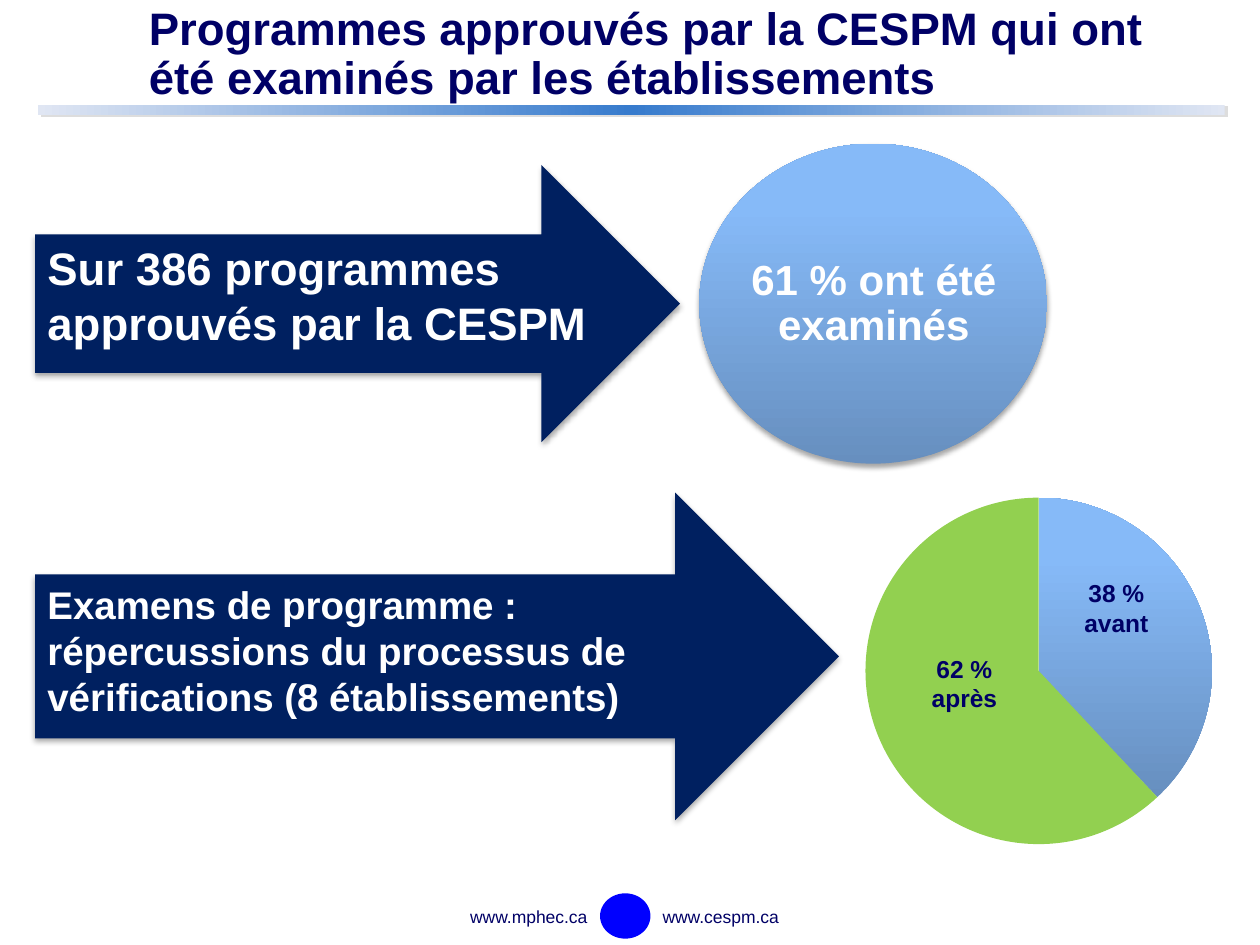
from copy import deepcopy

from lxml.etree import SubElement
from pptx import Presentation
from pptx.chart.data import CategoryChartData
from pptx.dml.color import RGBColor
from pptx.enum.chart import XL_CHART_TYPE as ChartType
from pptx.enum.shapes import MSO_SHAPE as Shape
from pptx.enum.text import MSO_ANCHOR as Anchor, PP_ALIGN as Align
from pptx.oxml import parse_xml
from pptx.oxml.ns import nsdecls, qn
from pptx.util import Pt

FONT = "Arial"
INK = RGBColor(0x00, 0x00, 0x66)
NAVY = RGBColor(0x00, 0x20, 0x60)
WHITE = RGBColor(0xFF, 0xFF, 0xFF)
GREEN = RGBColor(0x92, 0xD0, 0x50)
BADGE_BLUE = RGBColor(0x00, 0x00, 0xFF)
SKY_DARK = RGBColor(0x67, 0x8F, 0xBF)
SKY_LIGHT = RGBColor(0x86, 0xBA, 0xF8)
BAR_END = RGBColor(0xE0, 0xE6, 0xF3)
BAR_MIDDLE = RGBColor(0x37, 0x7B, 0xCD)

# Content: boxes are left, top, width, height in points
TITLE = "Programmes approuvés par la CESPM qui ont été examinés par les établissements"
TITLE_BOX = (77.8, 2.2, 621.4, 58.3)
BAR_BOX = (21.6, 59.8, 678.2, 5.8)
ARROWS = [
    ("Sur 386 programmes approuvés par la CESPM", 26, (20, 94.3, 368.6, 158.4)),
    ("Examens de programme : répercussions du processus de vérifications "
     "(8 établissements)", 22, (20, 281.5, 459.4, 187.2)),
]
ELLIPSE_BOX = (399.6, 82.1, 198.7, 182.9)
ELLIPSE_TEXT = "61 % ont été examinés"
ELLIPSE_TEXT_BOX = (429.1, 109.4, 140.4, 128.9)
PIE_BOX = (422.6, 281.5, 280.1, 203.8)
PIE_LAYOUT = {"x": 0.257, "y": 0, "w": 0.707, "h": 1}
PIE_VALUES = [38, 62]
PIE_LABELS = [
    ("62 %\naprès", (500, 370.1, 102.2, 41)),
    ("38 %\navant", (592.6, 326.9, 90.7, 41)),
]
BADGE_BOX = (342.9, 510.5, 28.8, 25.9)
FOOTERS = [
    ("www.mphec.ca", Align.RIGHT, (212.4, 514.1, 130.3, 19.4)),
    ("www.cespm.ca", Align.LEFT, (371.5, 514.1, 90, 19.4)),
]


def points(box):
    return [Pt(value) for value in box]


def write(shape, text, size, color, align=Align.LEFT, bold=True,
          anchor=Anchor.TOP, spacing=None):
    frame = shape.text_frame
    frame.word_wrap = True
    frame.vertical_anchor = anchor
    frame.text = text
    for para in frame.paragraphs:
        para.alignment = align
        para.line_spacing = spacing
        for span in para.runs:
            span.font.name, span.font.size = FONT, Pt(size)
            span.font.bold, span.font.color.rgb = bold, color


def add_text(page, box, *args, **kwargs):
    shape = page.shapes.add_textbox(*points(box))
    write(shape, *args, **kwargs)
    return shape


def add_plain(page, kind, box, color=None):
    shape = page.shapes.add_shape(kind, *points(box))
    shape.shadow.inherit = False
    shape.line.fill.background()
    if color is not None:
        shape.fill.solid()
        shape.fill.fore_color.rgb = color
    return shape


def set_gradient(fill, angle, stops):
    for stop, (position, color) in zip(fill.gradient_stops, stops):
        stop.position, stop.color.rgb = position, color
    fill.gradient_angle = angle


def sky_gradient(fill):
    fill.gradient()
    set_gradient(fill, 90, [(0, SKY_DARK), (0.8, SKY_LIGHT)])


def add_shadow(shape, color="000000", alpha=35, blur=3.1, distance=1.8, angle=90):
    effects = shape._element.spPr.find(qn("a:effectLst"))
    effects.append(parse_xml(
        f'<a:outerShdw {nsdecls("a")} blurRad="{Pt(blur)}" dist="{Pt(distance)}" '
        f'dir="{angle * 60000}" rotWithShape="0"><a:srgbClr val="{color}">'
        f'<a:alpha val="{alpha * 1000}"/></a:srgbClr></a:outerShdw>'))


def add_pie(page):
    data = CategoryChartData()
    data.categories = ["1", "2"]
    data.add_series("Series 1", PIE_VALUES)
    chart = page.shapes.add_chart(ChartType.PIE, *points(PIE_BOX), data).chart
    chart.has_legend = chart.has_title = False
    chart.font.name, chart.font.size = FONT, Pt(10)
    chart.font.color.rgb = INK
    plot = chart.plots[0]
    plot.vary_by_categories = True
    before, after = (plot.series[0].points[i].format for i in range(2))
    sky_gradient(before.fill)
    after.fill.solid()
    after.fill.fore_color.rgb = GREEN
    for part in (before, after):
        part.line.fill.background()

    # Fixed inner plot area
    area = chart._chartSpace.chart.plotArea
    for old in area.findall(qn("c:layout")):
        area.remove(old)
    layout = parse_xml(f'<c:layout {nsdecls("c")}><c:manualLayout/></c:layout>')
    settings = {"layoutTarget": "inner", "xMode": "edge", "yMode": "edge", **PIE_LAYOUT}
    for name, value in settings.items():
        SubElement(layout[0], qn(f"c:{name}")).set("val", str(value))
    area.insert(0, layout)


def main():
    deck = Presentation()
    deck.slide_width, deck.slide_height = Pt(720), Pt(540)
    page = deck.slides.add_slide(deck.slide_layouts[5])

    # Title and the bar below it
    title = page.shapes.title
    title.left, title.top, title.width, title.height = points(TITLE_BOX)
    write(title, TITLE, 26, INK, anchor=Anchor.MIDDLE, spacing=0.9)
    bar = add_plain(page, Shape.RECTANGLE, BAR_BOX)
    bar.fill.gradient()
    stop_list = bar._element.spPr.find(".//" + qn("a:gsLst"))
    stop_list.append(deepcopy(stop_list[0]))
    set_gradient(bar.fill, 0, [(0, BAR_END), (0.5, BAR_MIDDLE), (1, BAR_END)])
    add_shadow(bar, "DDDDDD", 100, 0, 2.2, 27)

    # Footer
    add_plain(page, Shape.OVAL, BADGE_BOX, BADGE_BLUE)
    for text, align, box in FOOTERS:
        add_text(page, box, text, 10, INK, align, bold=False)

    # Pie, ellipse and arrows
    add_pie(page)
    ellipse = add_plain(page, Shape.OVAL, ELLIPSE_BOX)
    sky_gradient(ellipse.fill)
    add_shadow(ellipse)
    label = add_text(page, ELLIPSE_TEXT_BOX, ELLIPSE_TEXT, 24, WHITE, Align.CENTER,
                     anchor=Anchor.MIDDLE, spacing=0.9)
    frame = label.text_frame
    frame.margin_left = frame.margin_right = frame.margin_top = frame.margin_bottom = 0
    for text, size, box in ARROWS:
        arrow = add_plain(page, Shape.RIGHT_ARROW, box, NAVY)
        add_shadow(arrow)
        write(arrow, text, size, WHITE)

    # Labels over the pie
    for text, box in PIE_LABELS:
        add_text(page, box, text, 14, INK, Align.CENTER)

    deck.save("out.pptx")


if __name__ == "__main__":
    main()
